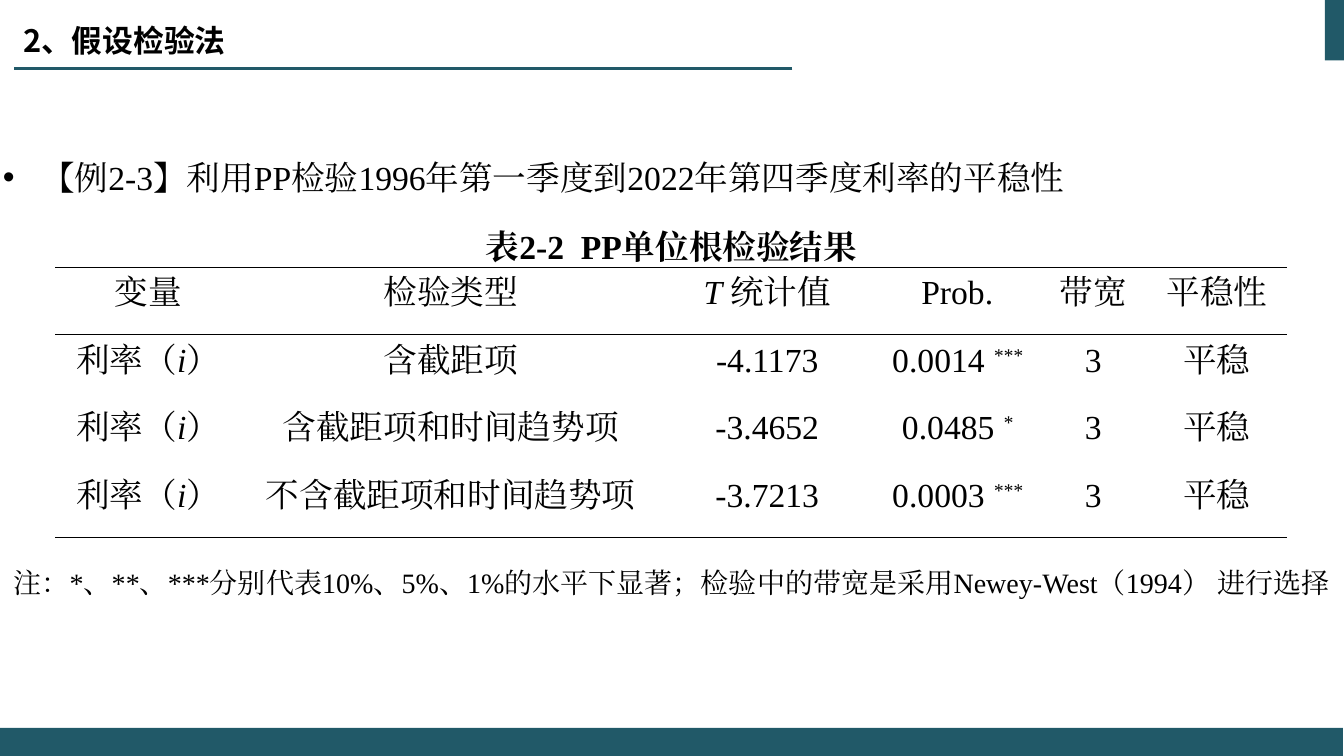
from lxml import etree
from pptx import Presentation, util as u
from pptx.dml.color import RGBColor
from pptx.enum import shapes, text
from pptx.oxml import ns

SANS, SERIF = "Noto Sans CJK SC", "Times New Roman"
TEAL, BLACK = "215968", "000000"
MID = text.PP_ALIGN.CENTER


def tint(code):
    return RGBColor.from_string(code)


def put(item, vals):
    for key, val in vals.items():
        setattr(item, key, val)


def node(base, tag, **attrs):
    return etree.SubElement(base, ns.qn(tag), attrs)


class Deck:
    def __init__(self):
        self.prs = Presentation()
        put(self.prs, {"slide_width": u.Inches(13.33), "slide_height": u.Inches(7.5)})
        self.slide = self.prs.slides.add_slide(self.prs.slide_layouts[6])

    def bar(self, *area):
        rect = self.slide.shapes.add_shape(shapes.MSO_SHAPE.RECTANGLE, *map(u.Inches, area))
        rect.shadow.inherit = False
        rect.fill.solid()
        rect.fill.fore_color.rgb = tint(TEAL)
        rect.line.fill.background()

    def rule(self, *ends):
        line = self.slide.shapes.add_connector(shapes.MSO_CONNECTOR.STRAIGHT,
                                               *map(u.Inches, ends))
        line.line.color.rgb = tint(TEAL)
        line.line.width = u.Pt(1.5)
        node(line._element.spPr, "a:effectLst")

    def run(self, para, words, face=SERIF, base=None, **style):
        run = para.add_run()
        run.text = words
        put(run.font, {"name": face, "size": u.Pt(24), **style})
        run.font.color.rgb = tint(BLACK)
        props = run.font._element
        node(props, "a:ea", typeface=face)
        if base:
            props.set("baseline", str(base * 1000))

    def box(self, area, paras, **frame):
        body = self.slide.shapes.add_textbox(*map(u.Inches, area)).text_frame
        put(body, {"word_wrap": True, **frame})
        for num, (words, style, form, dot) in enumerate(paras):
            para = body.add_paragraph() if num else body.paragraphs[0]
            if dot:
                props = para._p.get_or_add_pPr()
                hang = u.Inches(0.38)
                props.set("marL", str(hang))
                props.set("indent", str(-hang))
                node(props, "a:buFont", typeface="Arial")
                node(props, "a:buChar", char=dot)
            put(para, form)
            self.run(para, words, **style)

    def edge(self, cell, sides):
        props = cell._tc.get_or_add_tcPr()
        for side in "LRTB":
            line = node(props, "a:ln" + side, w=str(u.Pt(1)))
            if side in sides:
                node(node(line, "a:solidFill"), "a:srgbClr", val=BLACK)
            else:
                node(line, "a:noFill")

    def grid(self, left, top, cols, high, rows):
        area = map(u.Inches, (left, top, sum(cols), high * len(rows)))
        table = self.slide.shapes.add_table(len(rows), len(cols), *area).table
        put(table, {"first_row": False, "horz_banding": False})
        for col, wide in zip(table.columns, cols):
            col.width = u.Inches(wide)
        for y, row in enumerate(rows):
            table.rows[y].height = u.Inches(high)
            sides = {0: "TB", 1: "T", len(rows) - 1: "B"}.get(y, "")
            for x, runs in enumerate(row):
                cell = table.cell(y, x)
                put(cell, {"margin_left": u.Inches(0.07), "margin_right": u.Inches(0.07),
                           "margin_top": 0, "margin_bottom": 0,
                           "vertical_anchor": text.MSO_ANCHOR.MIDDLE})
                self.edge(cell, sides)
                cell.fill.background()
                para = cell.text_frame.paragraphs[0]
                put(para, {"alignment": MID, "line_spacing": u.Pt(16)})
                for words, style in runs:
                    self.run(para, words, **style)


def main():
    deck = Deck()

    # Frame and heading
    deck.bar(13.14, 0, 0.2, 0.6)
    deck.bar(0, 7.22, 13.32, 0.28)
    deck.rule(7.86, 0.68, 0.14, 0.68)
    head = {"face": SANS, "size": u.Pt(22), "bold": True}
    deck.box((0.13, -0.03, 5.91, 0.85), [("2、假设检验法", head, {}, None)],
             vertical_anchor=text.MSO_ANCHOR.MIDDLE)

    # Example, table caption and note below the table
    loose = {"line_spacing": 1.7}
    mid = {**loose, "alignment": MID}
    note = ("注：*、**、***分别代表10%、5%、1%的水平下显著；"
            "检验中的带宽是采用Newey-West（1994） 进行选择")
    deck.box((-0.07, 1.23, 13.46, 4.79), [
        ("【例2-3】利用PP检验1996年第一季度到2022年第四季度利率的平稳性", {}, loose, "•"),
        ("表2-2  PP单位根检验结果", {"bold": True}, mid, None),
        (note, {"size": u.Pt(20)}, {**mid, "space_before": u.Pt(197)}, None),
    ])

    # Test results
    ital = {"italic": True}
    star = {"italic": True, "base": 30}
    rows = [[[("变量", {})], [("检验类型", {})], [("T ", ital), ("统计值", {})],
             [("Prob.", {})], [("带宽", {})], [("平稳性", {})]]]
    for kind, stat, prob, mark in [
        ("含截距项", "-4.1173", "0.0014 ", "***"),
        ("含截距项和时间趋势项", "-3.4652", "0.0485 ", "*"),
        ("不含截距项和时间趋势项", "-3.7213", "0.0003 ", "***"),
    ]:
        rows.append([[("利率（", {}), ("i", ital), ("）", {})], [(kind, {})], [(stat, {})],
                     [(prob, {}), (mark, star)], [("3", {})], [("平稳", {})]])
    deck.grid(0.55, 2.65, [1.84, 4.16, 2.12, 1.65, 1.05, 1.4], 0.67, rows)

    deck.prs.save("out.pptx")


if __name__ == "__main__":
    main()
